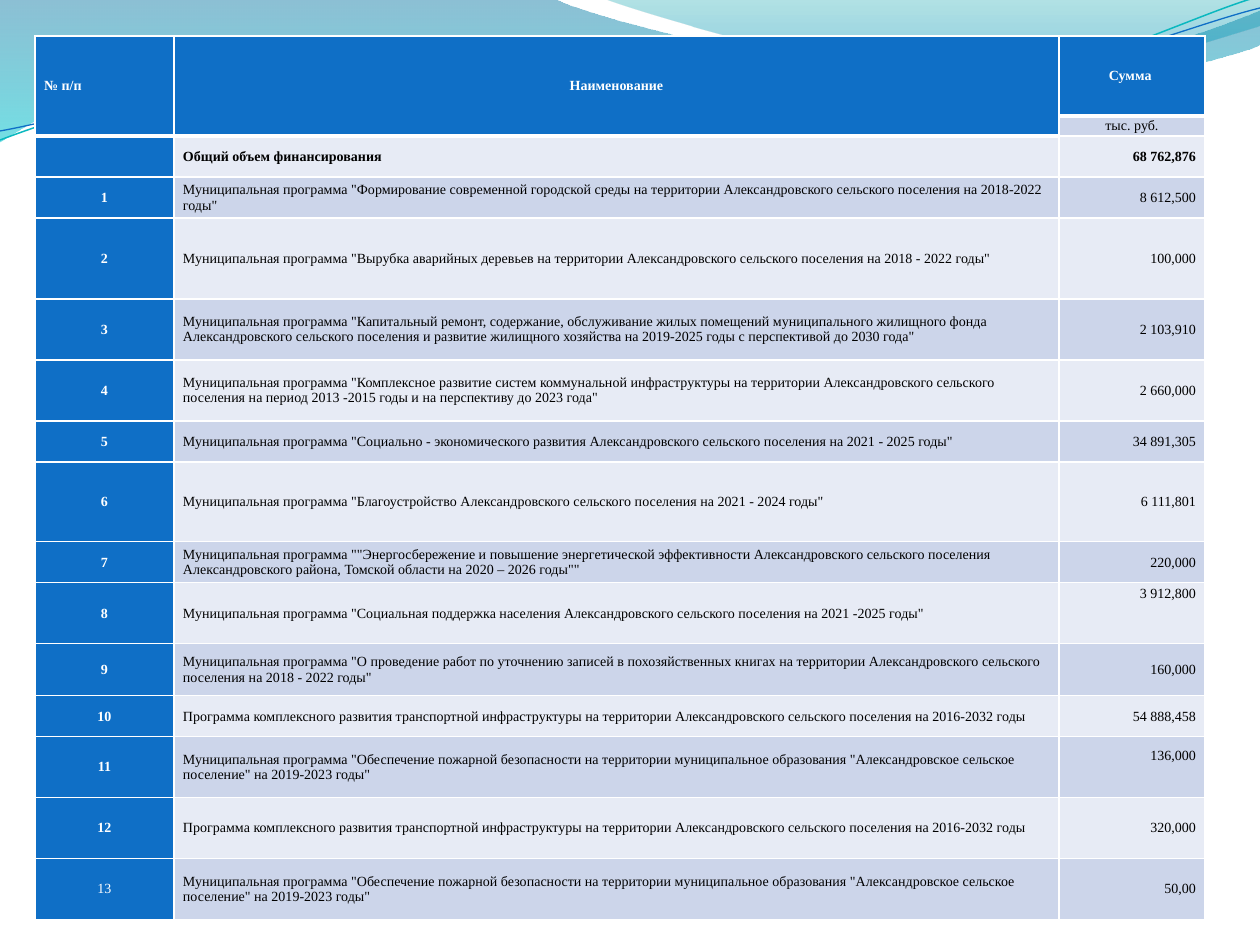
from lxml import etree
from pptx import Presentation
from pptx.dml.color import RGBColor
from pptx.enum.text import MSO_ANCHOR, PP_ALIGN
from pptx.oxml.ns import qn
from pptx.util import Pt

PX = 914400 // 126
LEFT, CENTER, RIGHT = PP_ALIGN.LEFT, PP_ALIGN.CENTER, PP_ALIGN.RIGHT
MIDDLE = MSO_ANCHOR.MIDDLE
FONT = "Times New Roman"
BLUE, WHITE, BLACK = "0F6FC6", "FFFFFF", "000000"
BANDS = ["E7EBF5", "CCD5EA"]

COLS = [139, 885, 146]
HEADS = [80, 20]
TRANSPORT = 'Программа комплексного развития транспортной инфраструктуры на территории Александровского сельского поселения на 2016-2032 годы'
FIRE = 'Муниципальная программа "Обеспечение пожарной безопасности на территории муниципальное образования "Александровское сельское поселение" на 2019-2023 годы"'
ROWS = [
    (41, "", 'Общий объем финансирования', "68 762,876"),
    (41, "1", 'Муниципальная программа "Формирование современной городской среды на территории Александровского сельского поселения на 2018-2022 годы"', "8 612,500"),
    (81, "2", 'Муниципальная программа "Вырубка аварийных деревьев на территории Александровского сельского поселения на 2018 - 2022 годы"', "100,000"),
    (61, "3", 'Муниципальная программа "Капитальный ремонт, содержание, обслуживание жилых помещений муниципального жилищного фонда Александровского сельского поселения и развитие жилищного хозяйства на 2019-2025 годы с перспективой до 2030 года"', "2 103,910"),
    (61, "4", 'Муниципальная программа "Комплексное развитие систем коммунальной инфраструктуры на территории Александровского сельского поселения на период 2013 -2015 годы и на перспективу до 2023 года"', "2 660,000"),
    (41, "5", 'Муниципальная программа "Социально - экономического развития Александровского сельского поселения на 2021 - 2025 годы"', "34 891,305"),
    (80, "6", 'Муниципальная программа "Благоустройство Александровского сельского поселения на 2021 - 2024 годы"', "6 111,801"),
    (41, "7", 'Муниципальная программа ""Энергосбережение и повышение энергетической эффективности Александровского сельского поселения Александровского района, Томской области на 2020 – 2026 годы""', "220,000"),
    (61, "8", 'Муниципальная программа "Социальная поддержка населения Александровского сельского поселения на 2021 -2025 годы"', "3 912,800"),
    (52, "9", 'Муниципальная программа "О проведение работ по уточнению записей в похозяйственных книгах на территории Александровского сельского поселения на 2018 - 2022 годы"', "160,000"),
    (41, "10", TRANSPORT, "54 888,458"),
    (61, "11", FIRE, "136,000"),
    (61, "12", TRANSPORT, "320,000"),
    (61, "13", FIRE, "50,00"),
]
RAISED = {"8": 39, "11": 23}

WAVES = [
    ([(0, 0), (554, -1), (600, 21, 837, 79, 955, 79), (1074, 79, 1207, 33, 1260, 11),
      (1261, 45), (1239, 55, 1096, 96, 940, 95), (784, 95, 481, 35, 324, 43),
      (163, 45, 58, 105, -1, 142)],
     [(0, "0074A1", 45), (1, "00C6CF", 55)]),
    ([(604, -1), (642, 14, 859, 78, 969, 82), (1079, 87, 1211, 40, 1260, 26), (1260, 0)],
     [(0, "00A1A9", 30), (0.8, "008BBF", 45)]),
]
STRANDS = [
    ([(0, 140), (60, 117, 199, 72, 349, 66), (498, 59, 747, 112, 898, 101),
      (1050, 89, 1182, 19, 1257, -3)], "0AB8BF", 0.85),
    ([(0, 131), (59, 121, 207, 77, 357, 71), (508, 64, 752, 106, 903, 95),
      (1053, 84, 1186, 26, 1260, 8)], BLUE, 0.75),
]


def rgb(value):
    return RGBColor.from_string(value)


def add_curve(s, x, y, segments, close):
    pts = [(x + seg[k], y + seg[k + 1]) for seg in segments for k in range(0, len(seg), 2)]
    builder = s.shapes.build_freeform(*pts[0], scale=PX)
    builder.add_line_segments(pts[1:], close=close)
    sp = builder.convert_to_shape()
    sp.shadow.inherit = False
    lines = iter(list(sp._element.iter(qn("a:lnTo"))))
    for seg in segments[1:]:
        first = next(lines)
        if len(seg) == 6:
            first.tag = qn("a:cubicBezTo")
            for line in (next(lines), next(lines)):
                first.append(line[0])
                line.getparent().remove(line)
    return sp


def add_waves(s, x, y):
    for segments, stops in WAVES:
        sp = add_curve(s, x, y, segments, True)
        sp.line.fill.background()
        sp.fill.gradient()
        sp.fill.gradient_angle = 270
        for stop, (pos, color, alpha) in zip(sp.fill.gradient_stops, stops):
            stop.position = pos
            stop.color.rgb = rgb(color)
        for clr, (pos, color, alpha) in zip(sp._element.spPr.iter(qn("a:srgbClr")), stops):
            etree.SubElement(clr, qn("a:alpha"), val=str(alpha * 1000))
    for segments, color, width in STRANDS:
        sp = add_curve(s, x, y, segments, False)
        sp.fill.background()
        sp.line.color.rgb = rgb(color)
        sp.line.width = Pt(width)


def set_borders(cell, bottom):
    tcPr = cell._tc.get_or_add_tcPr()
    for side, width in (("L", 1), ("R", 1), ("T", 1), ("B", bottom)):
        ln = etree.SubElement(tcPr, qn("a:ln" + side), w=str(Pt(width)))
        fill = etree.SubElement(ln, qn("a:solidFill"))
        etree.SubElement(fill, qn("a:srgbClr"), val=WHITE)


def set_cell(cell, text, fill, align=LEFT, color=BLACK, bold=False, bottom=1, pad=0):
    set_borders(cell, bottom)
    cell.fill.solid()
    cell.fill.fore_color.rgb = rgb(fill)
    cell.vertical_anchor = MIDDLE
    cell.margin_left = cell.margin_right = 9 * PX
    cell.margin_top, cell.margin_bottom = 0, pad * PX
    p = cell.text_frame.paragraphs[0]
    p.text = text
    p.alignment = align
    for r in p.runs:
        r.font.name = FONT
        r.font.size = Pt(8)
        r.font.bold = bold
        r.font.color.rgb = rgb(color)
    etree.SubElement(p._p, qn("a:endParaRPr"), sz="800")


def add_programs(s, x, y):
    heights = HEADS + [row[0] for row in ROWS]
    frame = s.shapes.add_table(len(heights), len(COLS), x * PX, y * PX,
                               sum(COLS) * PX, sum(heights) * PX)
    table = frame.table
    for col, width in zip(table.columns, COLS):
        col.width = width * PX
    for row, height in zip(table.rows, heights):
        row.height = height * PX

    heads = [("№ п/п", LEFT), ("Наименование", CENTER), ("Сумма ", CENTER)]
    for c, (text, align) in enumerate(heads):
        set_cell(table.cell(0, c), text, BLUE, align, WHITE, True, bottom=3)
    for c in (0, 1):
        set_cell(table.cell(1, c), "", BLUE, bottom=3)
        table.cell(0, c).merge(table.cell(1, c))
    set_cell(table.cell(1, 2), "тыс. руб.", BANDS[1], CENTER)

    for i, (height, number, name, amount) in enumerate(ROWS):
        r, band, total = i + len(HEADS), BANDS[i % 2], i == 0
        set_cell(table.cell(r, 0), number, BLUE, CENTER, WHITE, number != "13")
        set_cell(table.cell(r, 1), name, band, bold=total)
        set_cell(table.cell(r, 2), amount, band, RIGHT, bold=total, pad=RAISED.get(number, 0))


def main():
    prs = Presentation()
    prs.slide_width, prs.slide_height = 1260 * PX, 945 * PX
    s = prs.slides.add_slide(prs.slide_layouts[6])
    add_waves(s, 0, 0)
    add_programs(s, 35, 36)
    prs.save("out.pptx")


if __name__ == "__main__":
    main()
